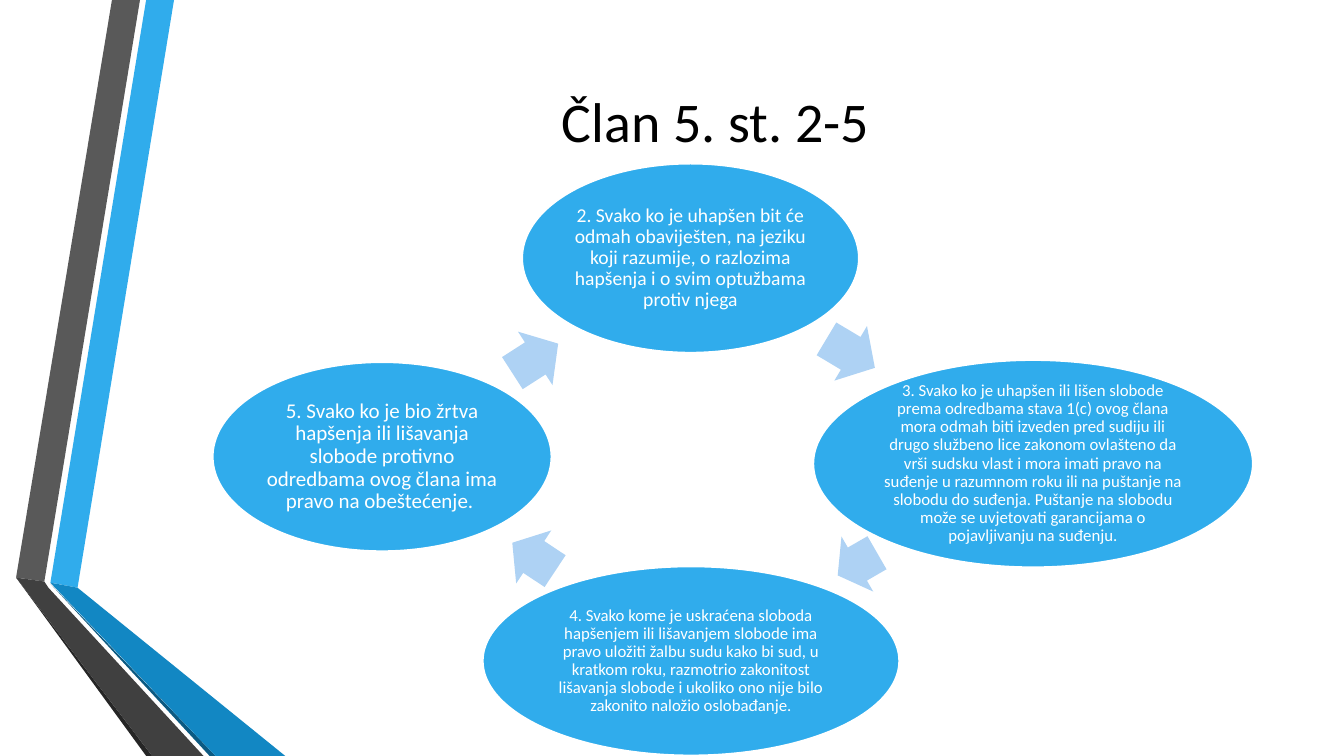
from pptx import Presentation
from pptx.dml.color import RGBColor
from pptx.enum.shapes import MSO_SHAPE
from pptx.enum.text import MSO_ANCHOR, MSO_AUTO_SIZE, PP_ALIGN
from pptx.util import Pt

BLACK = RGBColor(0x00, 0x00, 0x00)
WHITE = RGBColor(0xFF, 0xFF, 0xFF)
BLUE = RGBColor(0x30, 0xAC, 0xEC)
MID_BLUE = RGBColor(0x12, 0x87, 0xC3)
DARK_BLUE = RGBColor(0x0C, 0x5A, 0x82)
PALE_BLUE = RGBColor(0xAE, 0xD2, 0xF4)
GREY = RGBColor(0x59, 0x59, 0x59)
DARK_GREY = RGBColor(0x40, 0x40, 0x40)
NEAR_BLACK = RGBColor(0x26, 0x26, 0x26)


def paint(shape, color):
    shape.shadow.inherit = False
    shape.fill.solid()
    shape.fill.fore_color.rgb = color
    shape.line.fill.background()


def write(shape, text, size, color, inset):
    tf = shape.text_frame
    frame_format = {
        "word_wrap": True, "auto_size": MSO_AUTO_SIZE.NONE,
        "vertical_anchor": MSO_ANCHOR.MIDDLE,
        "margin_left": inset, "margin_right": inset,
        "margin_top": inset, "margin_bottom": inset,
    }
    for name, value in frame_format.items():
        setattr(tf, name, value)
    p = tf.paragraphs[0]
    p.alignment = PP_ALIGN.CENTER
    p.line_spacing = 0.9
    r = p.add_run()
    r.text = text
    for name, value in {"name": "Calibri", "size": Pt(size), "bold": False}.items():
        setattr(r.font, name, value)
    r.font.color.rgb = color


prs = Presentation()
prs.slide_width, prs.slide_height = Pt(960), Pt(540)
s = prs.slides.add_slide(prs.slide_layouts[5])
s.background.fill.solid()
s.background.fill.fore_color.rgb = WHITE

ribbons = [
    (BLUE, [(36, 416.2), (55.4, 419.8), (124.3, 0), (104.4, 0)]),
    (GREY, [(100, 0), (80, 0), (11.5, 412.6), (31.7, 415.4)]),
    (NEAR_BLACK, [(11.5, 412.6), (104.4, 540), (108.7, 540)]),
    (DARK_BLUE, [(36, 416.9), (149.8, 540), (154.1, 540)]),
    (MID_BLUE, [(36, 416.2), (154.1, 540), (203.8, 540), (55.4, 419.8)]),
    (DARK_GREY, [(145.4, 540), (34.6, 419.8), (31.7, 415.4), (11.5, 412.6), (108.7, 540)]),
]
for color, points in ribbons:
    corners = [(Pt(x), Pt(y)) for x, y in points]
    builder = s.shapes.build_freeform(*corners[0], scale=1.0)
    builder.add_line_segments(corners[1:], close=True)
    paint(builder.convert_to_shape(), color)

title = s.shapes.title
title.left, title.top, title.width, title.height = Pt(116.6), Pt(54), Pt(789.1), Pt(69.8)
write(title, "Član 5. st. 2-5", 40, BLACK, Pt(3.6))

steps = [
    ("2. Svako ko je uhapšen bit će odmah obaviješten, na jeziku koji razumije, "
     "o razlozima hapšenja i o svim optužbama protiv njega",
     14, (373, 116.9, 240.5, 135), (587.5, 229.7, 40.3), 30.9),
    ("3. Svako ko je uhapšen ili lišen slobode prema odredbama stava 1(c) ovog člana "
     "mora odmah biti izveden pred sudiju ili drugo službeno lice zakonom ovlašteno da "
     "vrši sudsku vlast i mora imati pravo na suđenje u razumnom roku ili na puštanje na "
     "slobodu do suđenja. Puštanje na slobodu može se uvjetovati garancijama o "
     "pojavljivanju na suđenju.",
     12, (581, 257.2, 313.9, 148), (596.2, 380.2, 32.4), 150),
    ("4. Svako kome je uskraćena sloboda hapšenjem ili lišavanjem slobode ima pravo "
     "uložiti žalbu sudu kako bi sud, u kratkom roku, razmotrio zakonitost lišavanja "
     "slobode i ukoliko ono nije bilo zakonito naložio oslobađanje.",
     12, (344.9, 404.6, 297.4, 135), (362.9, 375.1, 36.7), 213.5),
    ("5. Svako ko je bio žrtva hapšenja ili lišavanja slobode protivno odredbama ovog "
     "člana ima pravo na obeštećenje. ",
     15, (152, 258.7, 241.9, 135), (362.9, 233.3, 38.9), 327.2),
]
for text, size, box, (left, top, width), angle in steps:
    ellipse = s.shapes.add_shape(MSO_SHAPE.OVAL, *map(Pt, box))
    paint(ellipse, BLUE)
    ellipse.line.color.rgb = WHITE
    ellipse.line.width = Pt(1.25)
    write(ellipse, text, size, WHITE, Pt(1.4))
    arrow = s.shapes.add_shape(MSO_SHAPE.RIGHT_ARROW, Pt(left), Pt(top), Pt(width), Pt(45.4))
    paint(arrow, PALE_BLUE)
    arrow.adjustments[0] = 0.6
    arrow.rotation = angle

prs.save("out.pptx")
